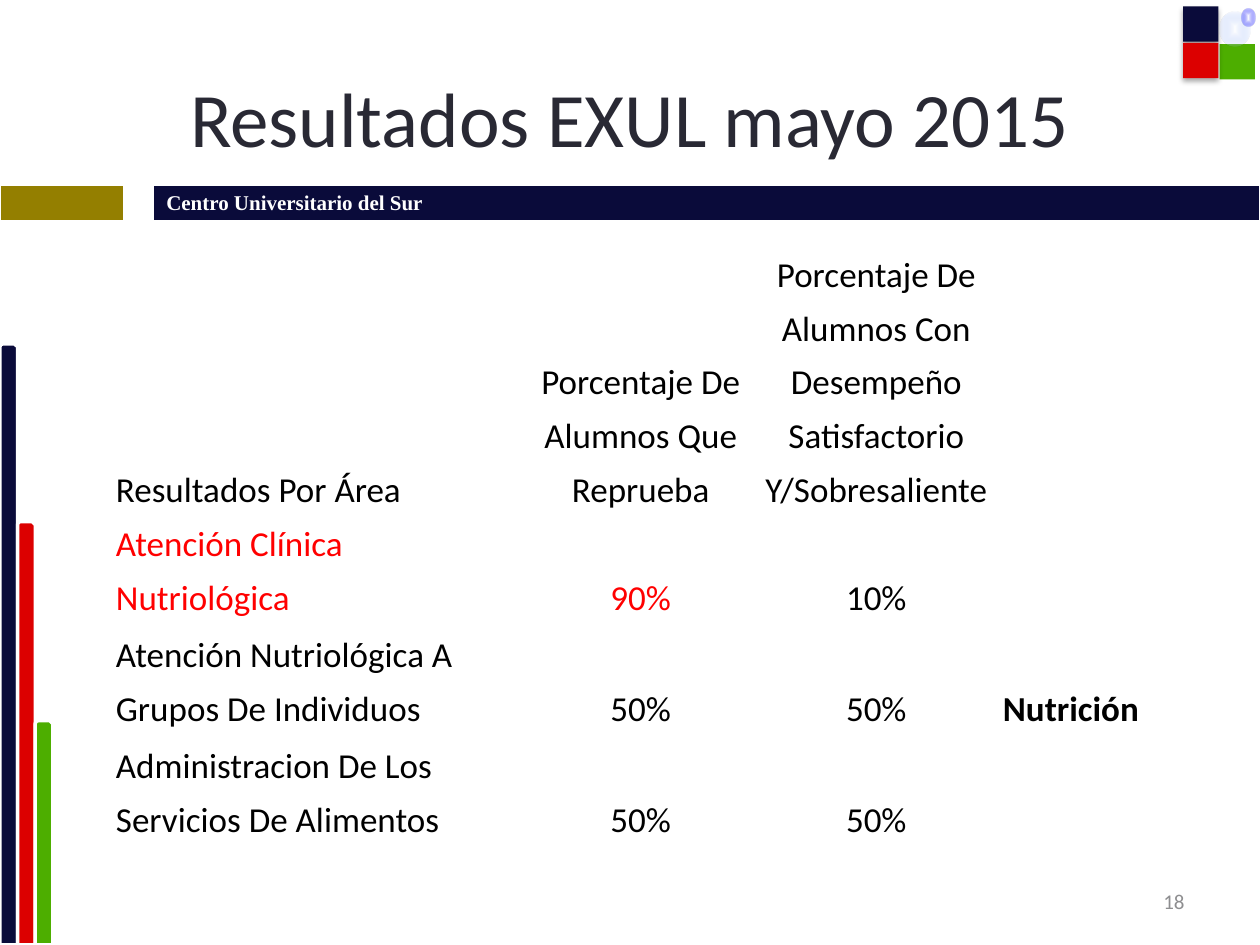
from pptx import Presentation
from pptx.dml.color import RGBColor
from pptx.enum.shapes import MSO_SHAPE as Shape
from pptx.enum.text import MSO_ANCHOR as Anchor, PP_ALIGN as Align
from pptx.oxml import parse_xml
from pptx.oxml.ns import nsdecls
from pptx.util import Inches, Pt

# Content
TITLE = "Resultados EXUL mayo 2015"
CENTRE = "Centro Universitario del Sur"
NUMBER = "18"
ROWS = [
    ("Resultados Por Área", "Porcentaje De Alumnos Que Reprueba",
     "Porcentaje De Alumnos Con Desempeño Satisfactorio Y/Sobresaliente", ""),
    ("Atención Clínica Nutriológica", "90%", "10%", ""),
    ("Atención Nutriológica A Grupos De Individuos", "50%", "50%", "Nutrición"),
    ("Administracion De Los Servicios De Alimentos", "50%", "50%", ""),
]
RED_CELLS = {(1, 0), (1, 1)}
WIDTHS = (3.3, 1.83, 1.91, 1.22)
HEIGHTS = (2.2, 0.86, 0.88, 0.88)

NAVY, RED, GREEN, GOLD, WHITE = "0A0B3A", "DC0000", "4DAE00", "947F00", "FFFFFF"
BAND = [(0.98, GOLD, ""), (0.24, None, ""), (8.78, NAVY, CENTRE)]
BARS = [(2.73, NAVY), (4.14, RED), (5.72, GREEN)]
SQUARES = [(9.68, 0.35, GREEN, False), (9.39, 0.05, NAVY, True),
           (9.39, 0.34, RED, True)]
GLOWS = [(9.68, 0.09, 0.24, 0.28, "A8C1FA", 10),
         (9.85, 0.07, 0.11, 0.14, "0000FF", 20)]


def rgb(code):
    return RGBColor.from_string(code)


def style(par, size, color, face="Calibri", bold=False, align=Align.LEFT):
    par.alignment = align
    font = par.font
    font.size, font.name, font.bold = Pt(size), face, bold
    font.color.rgb = rgb(color)


def paint(fill, color):
    if color:
        fill.solid()
        fill.fore_color.rgb = rgb(color)
    else:
        fill.background()


def add_shape(kind, box, color, edge=None):
    shape = slide.shapes.add_shape(kind, *map(Inches, box))
    shape.shadow.inherit = False
    paint(shape.fill, color)
    paint(shape.line.fill, edge)
    return shape


def add_table(left, top, widths, heights):
    box = map(Inches, (left, top, sum(widths), sum(heights)))
    table = slide.shapes.add_table(len(heights), len(widths), *box).table
    table.first_row = table.horz_banding = False
    for col, width in zip(table.columns, widths):
        col.width = Inches(width)
    for row, height in zip(table.rows, heights):
        row.height = Inches(height)
    return table


def drop_shadow(shape):
    old = shape.element.spPr.find(
        "{http://schemas.openxmlformats.org/drawingml/2006/main}effectLst")
    old.append(parse_xml(
        f'<a:outerShdw {nsdecls("a")} blurRad="39370" dist="22860" dir="5400000"'
        ' rotWithShape="0"><a:srgbClr val="000000"><a:alpha val="35000"/>'
        '</a:srgbClr></a:outerShdw>'))


def glow(shape, color, alpha):
    props = shape.element.spPr
    solid = props.find(
        "{http://schemas.openxmlformats.org/drawingml/2006/main}solidFill")
    props.replace(solid, parse_xml(
        f'<a:gradFill {nsdecls("a")} rotWithShape="1"><a:gsLst>'
        f'<a:gs pos="0"><a:srgbClr val="{WHITE}"/></a:gs>'
        f'<a:gs pos="100000"><a:srgbClr val="{color}">'
        f'<a:alpha val="{alpha * 1000}"/></a:srgbClr></a:gs></a:gsLst>'
        '<a:path path="shape"><a:fillToRect l="50000" t="50000" r="50000"'
        ' b="50000"/></a:path></a:gradFill>'))


prs = Presentation()
prs.slide_width, prs.slide_height = Inches(10), Inches(7.5)
slide = prs.slides.add_slide(prs.slide_layouts[5])

# Band under the title
band = add_table(0, 1.47, [width for width, _, _ in BAND], [0.28])
for cell, (_, color, text) in zip(band.rows[0].cells, BAND):
    paint(cell.fill, color)
    cell.vertical_anchor = Anchor.MIDDLE
    cell.text = text
    style(cell.text_frame.paragraphs[0], 12, WHITE, "Times New Roman", True)

# Bars rising from the bottom edge
for i, (top, color) in enumerate(BARS):
    add_shape(Shape.SNIP_ROUND_RECTANGLE, (0.14 * i, top, 0.14, 7.5 - top),
              color, WHITE).line.width = Pt(2)

# Corner ornament
for left, top, color, shaded in SQUARES:
    square = add_shape(Shape.RECTANGLE, (left, top, 0.28, 0.28), color)
    if shaded:
        drop_shadow(square)
for *box, color, alpha in GLOWS:
    glow(add_shape(Shape.OVAL, box, color), color, alpha)

# Title
title = slide.shapes.title
title.left, title.top, title.width, title.height = map(Inches, (0.5, 0.3, 9, 1.25))
title.text_frame.text = TITLE
title.text_frame.vertical_anchor = Anchor.MIDDLE
style(title.text_frame.paragraphs[0], 44, "292934", align=Align.CENTER)

# Slide number
frame = slide.shapes.add_textbox(*map(Inches, (7.17, 6.95, 2.33, 0.4))).text_frame
frame.word_wrap = True
frame.vertical_anchor = Anchor.MIDDLE
frame.text = NUMBER
style(frame.paragraphs[0], 12, "8E8E90", align=Align.RIGHT)

# Results by area
grid = add_table(0.87, 1.86, WIDTHS, HEIGHTS)
for r, row in enumerate(ROWS):
    for c, text in enumerate(row):
        cell = grid.cell(r, c)
        paint(cell.fill, None)
        cell.vertical_anchor = Anchor.BOTTOM
        cell.margin_left = cell.margin_right = Inches(0.05)
        cell.margin_top = cell.margin_bottom = 0
        cell.text = text
        par = cell.text_frame.paragraphs[0]
        par.line_spacing = 1.25
        style(par, 20, "FF0000" if (r, c) in RED_CELLS else "000000",
              bold=c == 3, align=Align.CENTER if c in (1, 2) else Align.LEFT)

prs.save("out.pptx")
